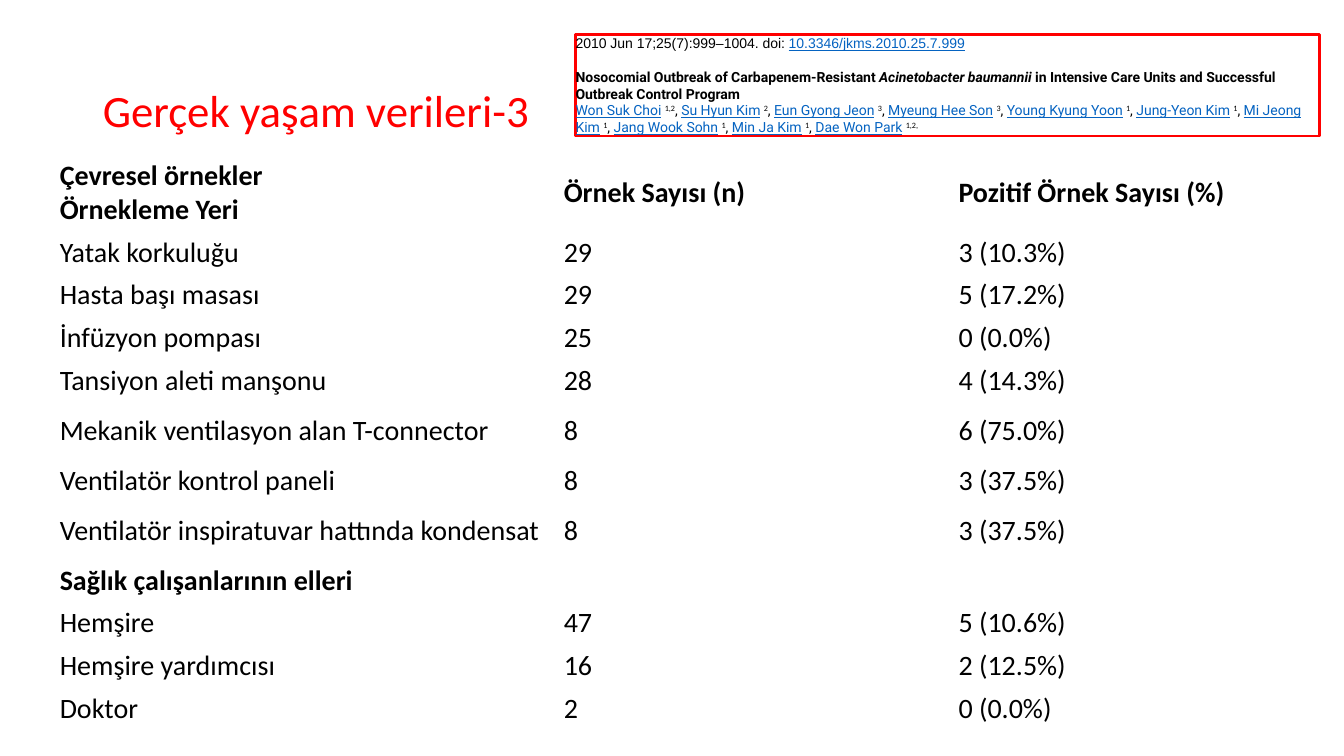
from pptx import Presentation
from pptx.dml.color import RGBColor
from pptx.enum import shapes, text
from pptx.util import Pt

RED, BLACK, LINK = "FF0000", "000000", "0563C1"

TITLE = "Gerçek yaşam verileri-3"
HEADER = ("Çevresel örnekler\nÖrnekleme Yeri", "Örnek Sayısı (n)", "Pozitif Örnek Sayısı (%)")
STAFF_HANDS = ("Sağlık çalışanlarının elleri", "", "")
SAMPLES = [
    HEADER,
    ("Yatak korkuluğu", "29", "3 (10.3%)"),
    ("Hasta başı masası", "29", "5 (17.2%)"),
    ("İnfüzyon pompası", "25", "0 (0.0%)"),
    ("Tansiyon aleti manşonu", "28", "4 (14.3%)"),
    ("Mekanik ventilasyon alan T-connector", "8", "6 (75.0%)"),
    ("Ventilatör kontrol paneli", "8", "3 (37.5%)"),
    ("Ventilatör inspiratuvar hattında kondensat", "8", "3 (37.5%)"),
    STAFF_HANDS,
    ("Hemşire", "47", "5 (10.6%)"),
    ("Hemşire yardımcısı", "16", "2 (12.5%)"),
    ("Doktor", "2", "0 (0.0%)"),
]
COLUMN_WIDTHS = (360, 282, 282)
ROW_HEIGHT = 30.4
SPECIAL_HEIGHTS = {0: 54.8, 5: 41, 7: 41}

JOURNAL = "2010 Jun 17;25(7):999–1004. doi: "
DOI = "10.3346/jkms.2010.25.7.999"
ARTICLE = [
    ("Nosocomial Outbreak of Carbapenem-Resistant ", False),
    ("Acinetobacter baumannii", True),
    (" in Intensive Care Units and Successful Outbreak Control Program", False),
]
AUTHORS = [
    ("Won Suk Choi", "1,2"), ("Su Hyun Kim", "2"), ("Eun Gyong Jeon", "3"),
    ("Myeung Hee Son", "3"), ("Young Kyung Yoon", "1"), ("Jung-Yeon Kim", "1"),
    ("Mi Jeong Kim", "1"), ("Jang Wook Sohn", "1"), ("Min Ja Kim", "1"),
    ("Dae Won Park", "1,2,"),
]


def rgb(code):
    return RGBColor.from_string(code)


def style(run, name, size, color=BLACK, bold=False, italic=False, underline=False):
    font = run.font
    font.name, font.size, font.color.rgb = name, Pt(size), rgb(color)
    font.bold, font.italic, font.underline = bold, italic, underline


def add_run(paragraph, words, name="Roboto", raised=False, **look):
    run = paragraph.add_run()
    run.text = words
    style(run, name, 10, **look)
    if raised:
        run._r.get_or_add_rPr().set("baseline", "30000")


def add_title(slide):
    title = slide.shapes.title
    title.left, title.top, title.width, title.height = Pt(66.24), Pt(28.8), Pt(342), Pt(104.4)
    frame = title.text_frame
    frame.text = TITLE
    frame.word_wrap = True
    frame.auto_size = text.MSO_AUTO_SIZE.NONE
    frame.vertical_anchor = text.MSO_ANCHOR.MIDDLE
    heading = frame.paragraphs[0]
    heading.alignment = text.PP_ALIGN.LEFT
    heading.line_spacing = 0.9
    style(heading.runs[0], "Calibri", 32, RED)


def add_samples(slide):
    heights = [SPECIAL_HEIGHTS.get(row, ROW_HEIGHT) for row in range(len(SAMPLES))]
    table = slide.shapes.add_table(
        len(SAMPLES), len(COLUMN_WIDTHS), Pt(36.72), Pt(110.16),
        Pt(sum(COLUMN_WIDTHS)), Pt(sum(heights))).table
    table.first_row = table.horz_banding = False
    for column, width in zip(table.columns, COLUMN_WIDTHS):
        column.width = Pt(width)
    for row, height, sample in zip(table.rows, heights, SAMPLES):
        row.height = Pt(height)
        for cell, words in zip(row.cells, sample):
            cell.fill.background()
            cell.vertical_anchor = text.MSO_ANCHOR.MIDDLE
            cell.margin_left = cell.margin_right = Pt(6)
            cell.margin_top = cell.margin_bottom = Pt(3)
            cell.text_frame.text = words
            for paragraph in cell.text_frame.paragraphs:
                for run in paragraph.runs:
                    style(run, "Calibri", 20, bold=sample in (HEADER, STAFF_HANDS))


def add_citation(slide):
    box = slide.shapes.add_shape(
        shapes.MSO_SHAPE.RECTANGLE, Pt(411.1), Pt(24.5), Pt(531.4), Pt(72.7))
    box.shadow.inherit = False
    box.fill.background()
    box.line.color.rgb = rgb(RED)
    box.line.width = Pt(2)
    frame = box.text_frame
    frame.word_wrap = True
    frame.vertical_anchor = text.MSO_ANCHOR.MIDDLE
    frame.margin_left = frame.margin_right = frame.margin_top = frame.margin_bottom = 0

    journal, article, authors = frame.paragraphs[0], frame.add_paragraph(), frame.add_paragraph()
    for paragraph in (journal, article, authors):
        paragraph.alignment = text.PP_ALIGN.LEFT
    article.space_before = Pt(12)

    add_run(journal, JOURNAL, "Arial")
    add_run(journal, DOI, "Arial", color=LINK, underline=True)
    for words, italic in ARTICLE:
        add_run(article, words, bold=True, italic=italic)
    for position, (author, affiliation) in enumerate(AUTHORS):
        if position:
            add_run(authors, ", ")
        add_run(authors, author, color=LINK, underline=True)
        add_run(authors, " ")
        add_run(authors, affiliation, "Calibri", raised=True)


def main():
    deck = Presentation()
    deck.slide_width, deck.slide_height = Pt(960), Pt(540)
    slide = deck.slides.add_slide(deck.slide_layouts[5])
    add_samples(slide)
    add_title(slide)
    add_citation(slide)
    deck.save("out.pptx")


if __name__ == "__main__":
    main()
